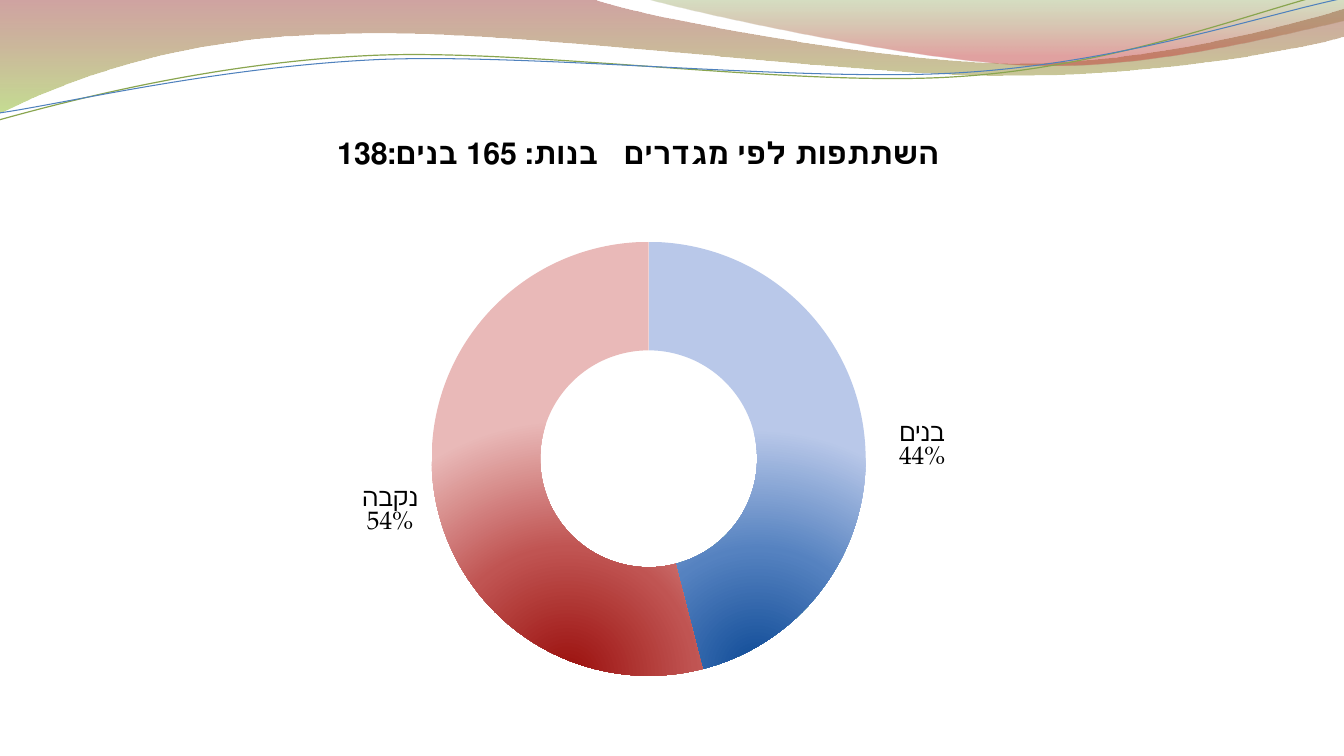
import math

from lxml import etree
from pptx import Presentation
from pptx.chart import data
from pptx.dml.color import RGBColor
from pptx.enum import chart as ec
from pptx.oxml import parse_xml
from pptx.oxml.ns import nsdecls, qn
from pptx.util import Inches, Pt

FONT = "TeX Gyre Pagella"
BLACK = RGBColor(0x00, 0x00, 0x00)
MAROON = RGBColor(0x97, 0x33, 0x30)
LIME = RGBColor(0x95, 0xC2, 0x38)
OLIVE = RGBColor(0x76, 0x95, 0x37)
RED = RGBColor(0xBE, 0x33, 0x30)
GREEN_LINE = RGBColor(0x89, 0xA5, 0x4F)
BLUE_LINE = RGBColor(0x4F, 0x81, 0xBD)
BOYS = [RGBColor(0x0E, 0x4A, 0x96), RGBColor(0x55, 0x82, 0xC0), RGBColor(0xB9, 0xC8, 0xE9)]
GIRLS = [RGBColor(0x9A, 0x0F, 0x0C), RGBColor(0xC0, 0x54, 0x52), RGBColor(0xE9, 0xB9, 0xB8)]
LINEAR = '<a:lin ang="5400000" scaled="0"/>'
RADIAL = '<a:path path="circle"><a:fillToRect l="50000" t="100000" r="50000"/></a:path>'
NO_LEADERS = (f'<c:extLst {nsdecls("c")}><c:ext uri="{{CE6537A1-D6FC-4f65-9D91-7224C49458BB}}" '
              'xmlns:c15="http://schemas.microsoft.com/office/drawing/2012/chart">'
              '<c15:showLeaderLines val="0"/></c:ext></c:extLst>')
TILT = 357.3

BANDS = [
    ([(0, 0), (5.87, -0.01), (6.34, 0.17, 8.85, 0.63, 10.11, 0.63),
      (11.38, 0.63, 12.78, 0.26, 13.33, 0.09), (13.35, 0.36),
      (13.11, 0.44, 11.6, 0.76, 9.94, 0.75), (8.29, 0.75, 5.09, 0.28, 3.43, 0.34),
      (1.72, 0.36, 0.61, 0.83, -0.01, 1.13), (0, 0)],
     [(0, MAROON, 45), (100, LIME, 55)]),
    ([(6.39, -0.01), (6.79, 0.11, 9.09, 0.62, 10.25, 0.65),
      (11.41, 0.69, 12.82, 0.32, 13.33, 0.21), (13.33, 0), (6.39, -0.01)],
     [(0, OLIVE, 30), (80, RED, 45)]),
]
CURVES = [
    ([(-0.01, 1.19), (0.64, 1.01, 2.11, 0.62, 3.69, 0.55),
      (5.27, 0.48, 7.9, 0.87, 9.5, 0.76), (11.1, 0.66, 12.52, 0.08, 13.31, -0.1)],
     (6.65, 0.58), GREEN_LINE, 0.85),
    ([(0, 1.12), (0.63, 1.03, 2.18, 0.66, 3.78, 0.59),
      (5.37, 0.53, 7.96, 0.82, 9.55, 0.72), (11.15, 0.62, 12.55, 0.14, 13.34, -0.02)],
     (6.67, 0.59), BLUE_LINE, 0.75),
]


def gradient(spPr, stops, direction):
    """Replace a solid fill by a gradient of (position, colour, opacity) stops."""
    gs = "".join(f'<a:gs pos="{pos * 1000}"><a:srgbClr val="{color}">'
                 f'<a:alpha val="{alpha * 1000}"/></a:srgbClr></a:gs>'
                 for pos, color, alpha in stops)
    fill = parse_xml(f'<a:gradFill {nsdecls("a")} rotWithShape="1">'
                     f'<a:gsLst>{gs}</a:gsLst>{direction}</a:gradFill>')
    spPr.replace(spPr.find(qn("a:solidFill")), fill)


def turn(px, py, center, degrees):
    """Rotate a point clockwise around a center."""
    a, dx, dy = math.radians(degrees), px - center[0], py - center[1]
    return (center[0] + dx * math.cos(a) - dy * math.sin(a),
            center[1] + dx * math.sin(a) + dy * math.cos(a))


def outline(shapes, x, y, segments, close, center=(0, 0), rotation=0):
    """Draw a freeform of straight and cubic segments, offset by x and y."""
    pts = [seg[i:i + 2] for seg in segments for i in range(0, len(seg), 2)]
    pts = [turn(px, py, center, -rotation) for px, py in pts]
    pts = [(Inches(x + px), Inches(y + py)) for px, py in pts]
    builder = shapes.build_freeform(*pts[0], scale=1.0)
    builder.add_line_segments(pts[1:], close=close)
    sp = builder.convert_to_shape()
    lines = iter(list(sp._element.iter(qn("a:lnTo"))))
    for seg in segments[1:]:
        first = next(lines)
        if len(seg) == 6:
            cubic = etree.Element(qn("a:cubicBezTo"))
            first.addprevious(cubic)
            for ln in (first, next(lines), next(lines)):
                cubic.append(ln[0])
                ln.getparent().remove(ln)
    sp.rotation = rotation
    sp.shadow.inherit = False
    return sp


def waves(s, x, y):
    """Draw the shaded bands and thin curves along the top."""
    for segments, stops in BANDS:
        sp = outline(s.shapes, x, y, segments, True)
        sp.fill.solid()
        gradient(sp._element.spPr, stops, LINEAR)
        sp.line.fill.background()
    group = s.shapes.add_group_shape()
    for segments, center, color, width in CURVES:
        sp = outline(group.shapes, x, y, segments, False, center, TILT)
        sp.fill.background()
        sp.line.color.rgb = color
        sp.line.width = Pt(width)


def write(tf, content, size=18, bold=False, rtl=False):
    """Write lines of text in one format."""
    for i, line in enumerate(content.split("\n")):
        p = tf.paragraphs[0] if i == 0 else tf.add_paragraph()
        if rtl:
            p._p.get_or_add_pPr().set("rtl", "1")
        r = p.add_run()
        r.text = line
        r.font.size, r.font.bold, r.font.name = Pt(size), bold, FONT
        r.font.color.rgb = BLACK


def layout(x, y, w=None, h=None, inner=False, edge=False):
    """Return a manual chart layout."""
    parts = [("layoutTarget", "inner")] if inner else []
    if inner or edge:
        parts += [("xMode", "edge"), ("yMode", "edge")]
    parts += [(k, v) for k, v in zip("xywh", (x, y, w, h)) if v is not None]
    body = "".join(f'<c:{k} val="{v}"/>' for k, v in parts)
    return parse_xml(f'<c:layout {nsdecls("c")}><c:manualLayout>{body}</c:manualLayout></c:layout>')


def place(parent, element, after):
    """Put a layout into its parent right after the named child, or first."""
    for old in parent.findall(qn("c:layout")):
        parent.remove(old)
    anchor = parent.find(qn(after)) if after else None
    parent.insert(0 if anchor is None else parent.index(anchor) + 1, element)


def gender_chart(s, x, y, w, h):
    """Place the doughnut of participation by gender."""
    cd = data.CategoryChartData()
    cd.categories = ["זכר", "נקבה"]
    cd.add_series("Series 1", (46, 54))
    chart = s.shapes.add_chart(ec.XL_CHART_TYPE.DOUGHNUT, Inches(x), Inches(y),
                               Inches(w), Inches(h), cd).chart
    chart.has_legend = False
    chart.font.size, chart.font.name = Pt(18), FONT
    chart.font.color.rgb = BLACK
    chart.has_title = True
    write(chart.chart_title.text_frame, "השתתפות לפי מגדרים   בנות: 165 בנים:138",
          size=21.6, bold=True, rtl=True)
    place(chart.chart_title._element, layout(0.22, 0.173, edge=True), "c:tx")
    plot = chart.plots[0]
    plot.vary_by_categories = True
    plot._element.find(qn("c:holeSize")).set("val", "75")
    place(chart._chartSpace.chart.plotArea,
          layout(0.299, 0.32, 0.345, 0.574, inner=True), None)

    series = plot.series[0]
    labels = series.data_labels
    labels.show_percentage = labels.show_category_name = True
    labels.show_value = False
    for i, colors in enumerate((BOYS, GIRLS)):
        fmt = series.points[i].format
        fmt.fill.solid()
        fmt.line.fill.background()
        spPr = series._element.findall(qn("c:dPt"))[i].find(qn("c:spPr"))
        gradient(spPr, [(50 * k, c, 100) for k, c in enumerate(colors)], RADIAL)

    write(series.points[0].data_label.text_frame, "בנים\n44%")
    series.points[1].data_label.font.size = Pt(18)
    dLbls = labels._element
    points = dLbls.findall(qn("c:dLbl"))
    for dLbl, shift in zip(points, ((0.089, 0.011), (-0.077, 0.043))):
        place(dLbl, layout(*shift), "c:idx")
        for tag, on in (("showVal", "0"), ("showCatName", "1"), ("showPercent", "1")):
            dLbl.find(qn(f"c:{tag}")).set("val", on)
    for owner in [*points, dLbls]:
        sep = etree.Element(qn("c:separator"))
        sep.text = "\n"
        last = owner.find(qn("c:showBubbleSize"))
        if last is None:
            last = owner.find(qn("c:showPercent"))
        last.addnext(sep)
    for leaders in dLbls.findall(qn("c:showLeaderLines")):
        leaders.set("val", "0")
    dLbls.append(parse_xml(NO_LEADERS))


def main():
    """Build the slide and save it."""
    prs = Presentation()
    prs.slide_width, prs.slide_height = Inches(13.33), Inches(7.5)
    s = prs.slides.add_slide(prs.slide_layouts[6])
    waves(s, 0, 0)
    gender_chart(s, 0.54, 0, 12.5, 7.5)
    prs.save("out.pptx")


if __name__ == "__main__":
    main()
